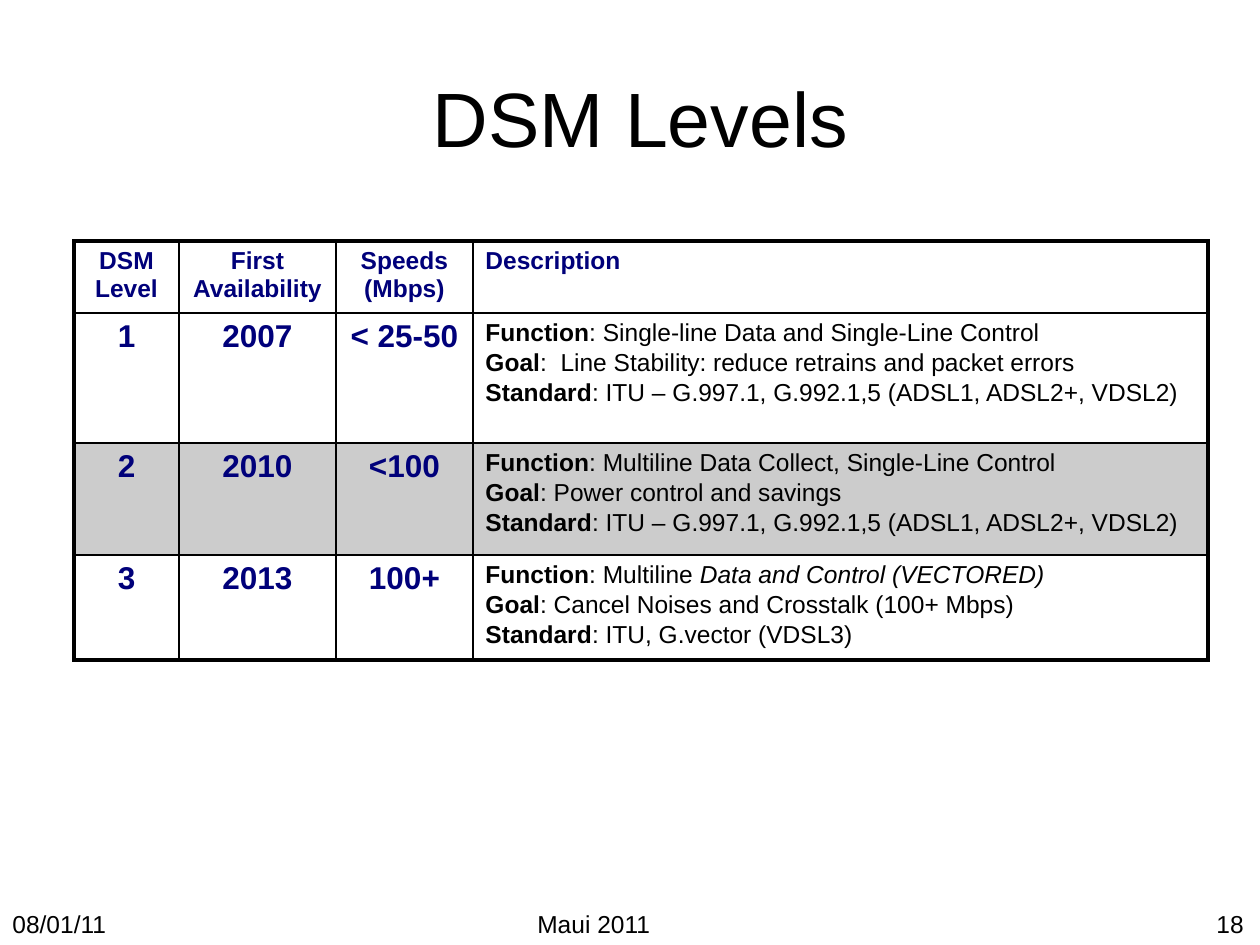
from dataclasses import dataclass

from lxml import etree
from pptx import Presentation
from pptx.dml.color import RGBColor
from pptx.enum.text import MSO_ANCHOR, PP_ALIGN
from pptx.oxml.ns import qn
from pptx.util import Emu, Pt

LEFT, CENTER = PP_ALIGN.LEFT, PP_ALIGN.CENTER
MIDDLE = MSO_ANCHOR.MIDDLE
EMU_PER_PX = 914400 / 126


@dataclass(frozen=True)
class Theme:
    font: str = "Arial"
    ink: str = "000000"
    navy: str = "00007A"
    band: str = "CCCCCC"
    title: int = 44
    level: int = 18
    body: int = 14
    outer_line: float = 2.25
    inner_line: float = 1


theme = Theme()


def px(length):
    return Emu(round(length * EMU_PER_PX))


def add_text(paragraph, text, size=theme.body, color=theme.ink,
             bold=False, italic=False, align=LEFT):
    paragraph.alignment = align
    run = paragraph.add_run()
    run.text = text
    run.font.name = theme.font
    run.font.size = Pt(size)
    run.font.bold = bold
    run.font.italic = italic
    run.font.color.rgb = RGBColor.from_string(color)


presentation = Presentation()
presentation.slide_width, presentation.slide_height = px(1260), px(945)
TITLE_ONLY = presentation.slide_layouts[5]
slide = presentation.slides.add_slide(TITLE_ONLY)

# Title
title = slide.shapes.title
title.left, title.top, title.width, title.height = px(84), px(38), px(1113), px(158)
title.text_frame.vertical_anchor = MIDDLE
add_text(title.text_frame.paragraphs[0], "DSM Levels", size=theme.title, align=CENTER)

# Table of levels
headings = ["DSM Level", "First Availability", "Speeds (Mbps)", "Description"]
common_standard = "ITU – G.997.1, G.992.1,5 (ADSL1, ADSL2+, VDSL2)"
levels = [
    ("1", "2007", "< 25-50", [
        ("Function", ": Single-line Data and Single-Line Control", ""),
        ("Goal", ":  Line Stability: reduce retrains and packet errors", ""),
        ("Standard", ": " + common_standard, ""),
    ]),
    ("2", "2010", "<100", [
        ("Function", ": Multiline Data Collect, Single-Line Control", ""),
        ("Goal", ": Power control and savings", ""),
        ("Standard", ": " + common_standard, ""),
    ]),
    ("3", "2013", "100+", [
        ("Function", ": Multiline ", "Data and Control (VECTORED)"),
        ("Goal", ": Cancel Noises and Crosstalk (100+ Mbps)", ""),
        ("Standard", ": ITU, G.vector (VDSL3)", ""),
    ]),
]
column_widths = [105, 157, 137, 735]
row_heights = [72, 130, 112, 105]
last_column, last_row = len(column_widths) - 1, len(row_heights) - 1
shaded_row = 2

table = slide.shapes.add_table(
    len(row_heights), len(column_widths), px(74), px(241),
    px(sum(column_widths)), px(sum(row_heights))).table
table.first_row = table.horz_banding = False
for column, width in zip(table.columns, column_widths):
    column.width = px(width)
for row, height in zip(table.rows, row_heights):
    row.height = px(height)

for column_index, heading in enumerate(headings):
    add_text(table.cell(0, column_index).text_frame.paragraphs[0], heading,
             color=theme.navy, bold=True,
             align=LEFT if column_index == last_column else CENTER)

for row_index, (*facts, description) in enumerate(levels, start=1):
    for column_index, fact in enumerate(facts):
        add_text(table.cell(row_index, column_index).text_frame.paragraphs[0], fact,
                 size=theme.level, color=theme.navy, bold=True, align=CENTER)
    frame = table.cell(row_index, last_column).text_frame
    for line_index, (label, detail, emphasis) in enumerate(description):
        if line_index:
            paragraph = frame.add_paragraph()
            paragraph.space_before = Pt(1.4)
        else:
            paragraph = frame.paragraphs[0]
        add_text(paragraph, label, bold=True)
        add_text(paragraph, detail)
        if emphasis:
            add_text(paragraph, emphasis, italic=True)

# Cell borders come before the fill in the cell properties
for row_index in range(len(row_heights)):
    for column_index in range(len(column_widths)):
        cell = table.cell(row_index, column_index)
        properties = cell._tc.get_or_add_tcPr()
        on_outside = {
            "a:lnL": column_index == 0,
            "a:lnR": column_index == last_column,
            "a:lnT": row_index == 0,
            "a:lnB": row_index == last_row,
        }
        for side, is_outer in on_outside.items():
            weight = theme.outer_line if is_outer else theme.inner_line
            border = etree.SubElement(properties, qn(side), w=str(Pt(weight)))
            border_fill = etree.SubElement(border, qn("a:solidFill"))
            etree.SubElement(border_fill, qn("a:srgbClr"), val=theme.ink)
        if row_index == shaded_row:
            cell.fill.solid()
            cell.fill.fore_color.rgb = RGBColor.from_string(theme.band)
        else:
            cell.fill.background()

# Footer: date, event and page number
footer_parts = [("08/01/11", 0, 121), ("Maui 2011", 525, 139), ("18", 1204, 56)]
for text, left, width in footer_parts:
    footer = slide.shapes.add_textbox(px(left), px(903), px(width), px(42))
    footer.text_frame.word_wrap = False
    add_text(footer.text_frame.paragraphs[0], text)

presentation.save("out.pptx")
